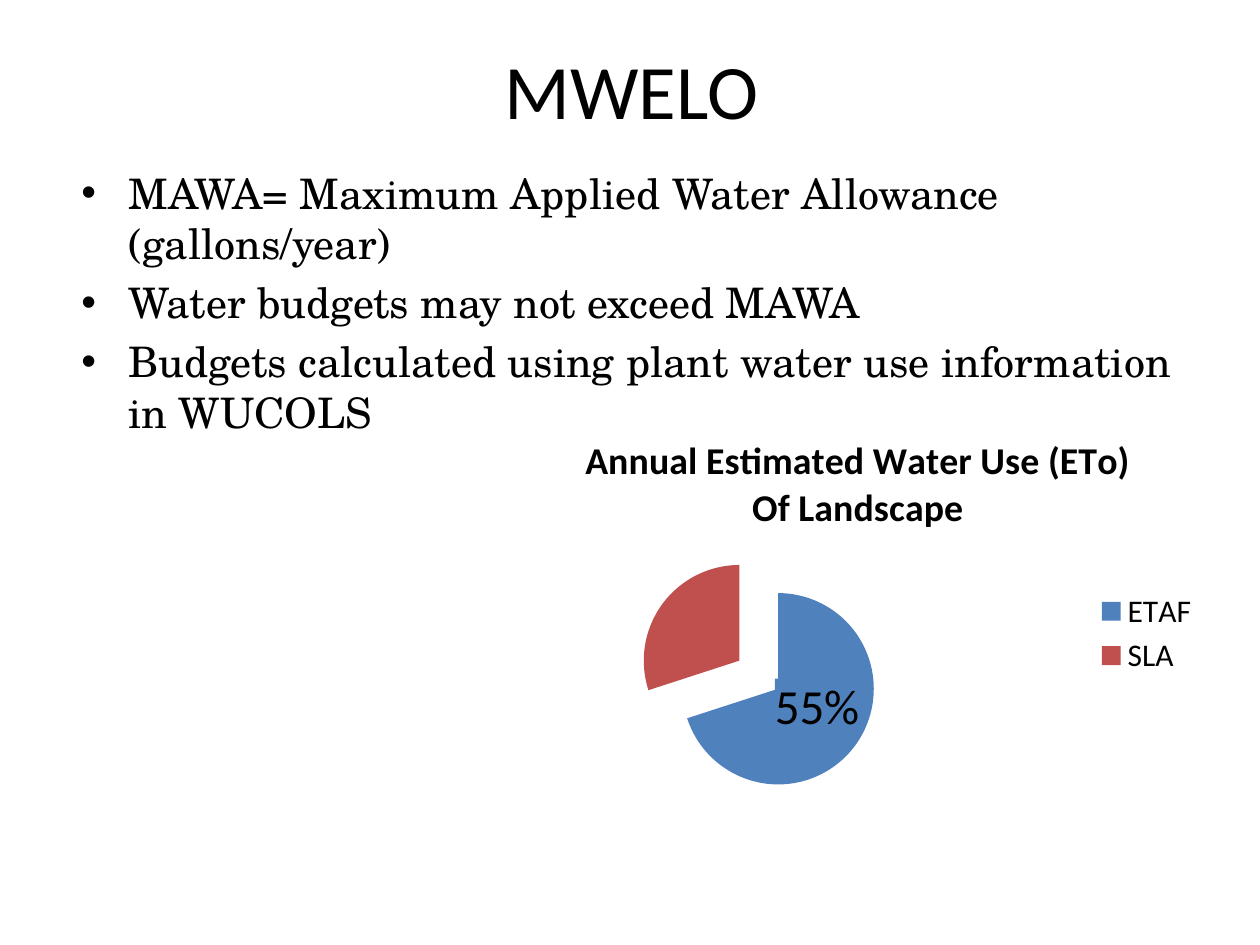
from lxml.etree import SubElement
from pptx import Presentation
from pptx.chart.data import CategoryChartData
from pptx.dml.color import RGBColor
from pptx.enum.chart import XL_CHART_TYPE, XL_LABEL_POSITION, XL_LEGEND_POSITION
from pptx.enum.text import MSO_ANCHOR, MSO_AUTO_SIZE, PP_ALIGN
from pptx.oxml import parse_xml
from pptx.oxml.ns import nsdecls, qn
from pptx.util import Emu, Pt

COLORS = {"text": "000000", "ETAF": "4F81BD", "SLA": "C0504D"}


def px(length):
    return Emu(round(length * 914400 / 126))


def write(paragraph, text, font="Calibri", size=18, bold=False, align=None, before=0):
    paragraph.alignment = align
    paragraph.space_before = Pt(before)
    run = paragraph.add_run()
    run.text = text
    run.font.name = font
    run.font.size = Pt(size)
    run.font.bold = bold
    run.font.color.rgb = RGBColor.from_string(COLORS["text"])


deck = Presentation()
deck.slide_width, deck.slide_height = px(1260), px(945)
slide = deck.slides.add_slide(deck.slide_layouts[5])

# Heading
heading = slide.shapes.title
heading.left, heading.top, heading.width, heading.height = px(69), px(37), px(1125), px(154)
heading.text_frame.vertical_anchor = MSO_ANCHOR.TOP
heading.text_frame.auto_size = MSO_AUTO_SIZE.NONE
heading.text_frame.margin_top = px(6)
write(heading.text_frame.paragraphs[0], "MWELO", size=44, align=PP_ALIGN.CENTER)

# Water budget rules
rules = slide.shapes.add_textbox(px(69), px(161), px(1125), px(571)).text_frame
rules.word_wrap = True
for index, rule in enumerate([
    "MAWA= Maximum Applied Water Allowance (gallons/year)",
    "Water budgets may not exceed MAWA",
    "Budgets calculated using plant water use information in WUCOLS",
]):
    paragraph = rules.add_paragraph() if index else rules.paragraphs[0]
    properties = paragraph._p.get_or_add_pPr()
    properties.set("marL", str(px(47)))
    properties.set("indent", str(-px(47)))
    SubElement(properties, qn("a:buFont"), typeface="Arial")
    SubElement(properties, qn("a:buChar"), char="•")
    write(paragraph, rule, font="TeX Gyre Schola", size=24, before=5 if index else 0)

# Water use chart
water_use = CategoryChartData(number_format="0%")
water_use.categories = ["ETAF", "SLA"]
water_use.add_series("Series 1", [0.7, 0.3])
chart = slide.shapes.add_chart(
    XL_CHART_TYPE.PIE, px(504), px(416), px(708), px(435), water_use
).chart
chart.font.name = "Calibri"
chart.font.size = Pt(18)
chart.font.color.rgb = RGBColor.from_string(COLORS["text"])

chart_title = chart.chart_title.text_frame
write(chart_title.paragraphs[0], "Annual Estimated Water Use (ETo)", size=21.6, bold=True)
write(chart_title.add_paragraph(), "Of Landscape", size=21.6, bold=True)
chart.chart_title.include_in_layout = False

chart.has_legend = True
chart.legend.position = XL_LEGEND_POSITION.RIGHT
chart.legend.include_in_layout = False

pie = chart.plots[0]
pie.vary_by_categories = True
shares = pie.series[0]
share_labels = shares.data_labels
share_labels.show_value = True
share_labels.number_format = "0%"
share_labels.number_format_is_linked = False
share_labels.font.size = Pt(28)
share_labels.font.bold = True
for index, (category, share_text) in enumerate({"ETAF": "55%", "SLA": ""}.items()):
    point = shares.points[index]
    point.format.fill.solid()
    point.format.fill.fore_color.rgb = RGBColor.from_string(COLORS[category])
    write(point.data_label.text_frame.paragraphs[0], share_text, size=28)
    point.data_label.position = XL_LABEL_POSITION.CENTER

explosion = parse_xml(f'<c:explosion {nsdecls("c")} val="25"/>')
shares._element.find(qn("c:dPt")).addprevious(explosion)

# The ETAF label is filled like its slice and raised a little
etaf_label = shares._element.find(".//" + qn("c:dLbl"))
etaf_label.find(qn("c:tx")).addnext(parse_xml(
    f'<c:spPr {nsdecls("c", "a")}><a:solidFill>'
    f'<a:srgbClr val="{COLORS["ETAF"]}"/></a:solidFill></c:spPr>'
))
etaf_label.find(qn("c:idx")).addnext(parse_xml(
    f'<c:layout {nsdecls("c")}><c:manualLayout>'
    '<c:x val="0"/><c:y val="-0.02"/></c:manualLayout></c:layout>'
))

# Plot area as shares of the chart frame
plot_area = chart._chartSpace.chart.plotArea
for old_layout in plot_area.findall(qn("c:layout")):
    plot_area.remove(old_layout)
plot_area.insert(0, parse_xml(
    f'<c:layout {nsdecls("c")}><c:manualLayout><c:layoutTarget val="inner"/>'
    '<c:xMode val="edge"/><c:yMode val="edge"/><c:x val="0.19"/><c:y val="0.32"/>'
    '<c:w val="0.34"/><c:h val="0.55"/></c:manualLayout></c:layout>'
))

deck.save("out.pptx")
